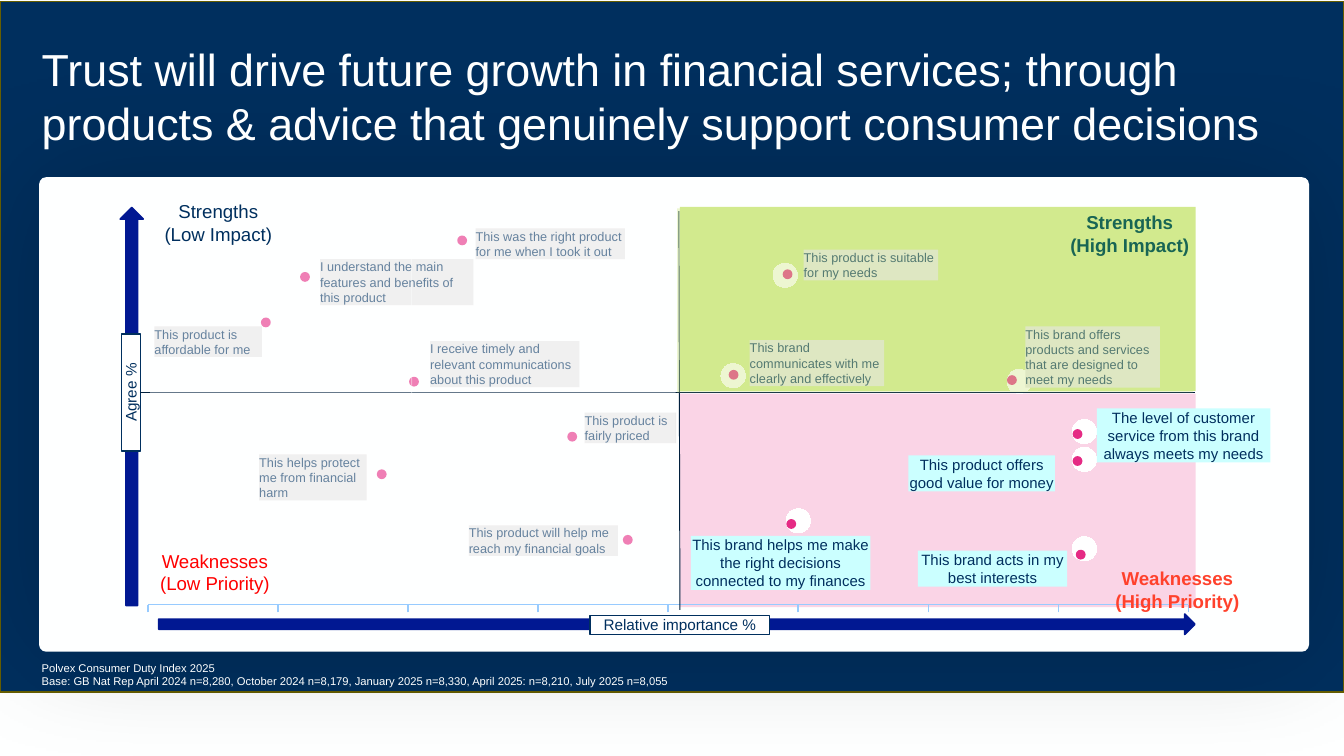
from dataclasses import dataclass

import pptx
import pptx.chart.data
import pptx.dml.color
import pptx.enum.chart
import pptx.enum.shapes
import pptx.enum.text
import pptx.oxml
import pptx.oxml.ns
import pptx.util

Cm, Pt = pptx.util.Cm, pptx.util.Pt
SHAPE = pptx.enum.shapes.MSO_SHAPE
ALIGN = pptx.enum.text.PP_ALIGN
ANCHOR = pptx.enum.text.MSO_ANCHOR
NAVY, WHITE, BLUE, PINK, LIME = "002F5E", "FEFFFF", "011892", "E52A84", "D2EA8E"
NS = pptx.oxml.ns.nsdecls("a")
DOT = 0.15


@dataclass
class Box:
    x: float
    y: float
    w: float
    h: float


@dataclass
class Statement:
    text: str
    x: float
    y: float
    w: float
    lines: int
    dot_x: float
    dot_y: float
    key: bool = False


@dataclass
class Corner:
    text: str
    box: Box
    color: str
    bold: bool = False


STATEMENTS = [
    Statement("This product is affordable for me", 2.92, 6.17, 2.03, 2, 4.95, 6.02),
    Statement("This product will help me reach my financial goals", 8.86, 9.93, 2.82, 2, 11.79, 10.13),
    Statement("This was the right product for me when I took it out", 8.99, 4.32, 2.82, 2, 8.66, 4.47),
    Statement("This product is suitable for my needs", 15.19, 4.72, 2.54, 2, 14.81, 5.11),
    Statement("This brand communicates with me clearly and effectively", 14.17, 6.43, 2.54, 3, 13.79, 7.01),
    Statement("The level of customer service from this brand always meets my needs",
              20.73, 7.72, 3.28, 3, 20.29, 8.13, True),
    Statement("This brand acts in my best interests", 17.35, 10.41, 2.82, 2, 20.35, 10.41, True),
    Statement("This brand offers products and services that are designed to meet my needs",
              19.38, 6.17, 2.54, 4, 19.05, 7.11),
    Statement("This brand helps me make the right decisions connected to my finances",
              13.06, 10.13, 3.39, 3, 14.88, 9.83, True),
    Statement("This product is fairly priced", 11.05, 7.8, 1.73, 2, 10.74, 8.18),
    Statement("I receive timely and relevant communications about this product", 8.13, 6.45, 2.82, 3, 7.75, 7.14),
    Statement("This helps protect me from financial harm", 4.9, 8.59, 2.03, 3, 7.14, 8.89),
    Statement("I understand the main features and benefits of this product", 6.05, 4.9, 2.9, 3, 5.69, 5.16),
    Statement("This product offers good value for money", 17.17, 8.61, 2.77, 2, 20.29, 8.64, True),
]
CORNERS = [
    Corner("Weaknesses\n(High Priority)", Box(21.03, 10.72, 2.44, 0.86), "FF412C", True),
    Corner("Weaknesses\n(Low Priority)", Box(2.84, 10.39, 2.44, 0.86), "FF0000"),
    Corner("Strengths\n(Low Impact)", Box(3.07, 3.78, 2.11, 0.86), NAVY),
]
HIGH_IMPACT = Corner("Strengths\n(High Impact)", Box(19.89, 3.99, 2.92, 0.86), "186554", True)
VEILS = [(Box(2.84, 4.75, 4.95, 5.51), WHITE), (Box(7.77, 3.91, 5, 7.19), WHITE),
         (Box(12.8, 3.94, 9.75, 3.48), LIME)]
POINTS = [(0.051, 75), (0.042, 93), (0.102, 66), (0.102, 45), (0.075, 76), (0.08, 50), (0.048, 59),
          (0.097, 75), (0.039, 86), (0.063, 66), (0.079, 94), (0.102, 61), (0.067, 48), (0.054, 100)]


def rgb(color: str):
    return pptx.dml.color.RGBColor.from_string(color)


def place(box: Box):
    return Cm(box.x), Cm(box.y), Cm(box.w), Cm(box.h)


def add_box(s, box: Box, fill: str, kind=SHAPE.RECTANGLE, line: str = "", width: float = 1, rotation: float = 0):
    sp = s.shapes.add_shape(kind, *place(box))
    sp.shadow.inherit = False
    sp.rotation = rotation
    sp.fill.solid()
    sp.fill.fore_color.rgb = rgb(fill)
    if line:
        sp.line.color.rgb = rgb(line)
        sp.line.width = Pt(width)
    else:
        sp.line.fill.background()
    return sp


def write(sp, text: str, *, size: float, color: str = NAVY, bold: bool = False, align=ALIGN.LEFT):
    tf = sp.text_frame
    tf.word_wrap = True
    tf.auto_size = pptx.enum.text.MSO_AUTO_SIZE.SHAPE_TO_FIT_TEXT
    tf.vertical_anchor = ANCHOR.TOP
    tf.margin_left = tf.margin_right = tf.margin_top = tf.margin_bottom = 0
    for i, line in enumerate(text.split("\n")):
        p = tf.paragraphs[0] if i == 0 else tf.add_paragraph()
        p.alignment = align
        r = p.add_run()
        r.text = line
        r.font.name, r.font.size, r.font.bold = "Arial", Pt(size), bold
        r.font.color.rgb = rgb(color)


def add_text(s, box: Box, text: str, **style):
    write(s.shapes.add_textbox(*place(box)), text, **style)


def add_corner(s, corner: Corner):
    add_text(s, corner.box, corner.text, size=10, color=corner.color, bold=corner.bold, align=ALIGN.CENTER)


def add_axis_title(s, box: Box, text: str, rotation: float = 0):
    sp = add_box(s, box, "FFFFFF", line=NAVY, width=0.75, rotation=rotation)
    write(sp, text, size=8.2, align=ALIGN.CENTER)


def add_divider(s, x1: float, y1: float, x2: float, y2: float):
    sp = s.shapes.add_connector(pptx.enum.shapes.MSO_CONNECTOR.STRAIGHT, Cm(x1), Cm(y1), Cm(x2), Cm(y2))
    sp.line.color.rgb = rgb("001F3D")
    sp.line.width = Pt(0.5)
    sp._element.spPr.append(pptx.oxml.parse_xml(f"<a:effectLst {NS}/>"))


def add_statement(s, st: Statement):
    height = st.lines * (0.34 if st.key else 0.29)
    sp = add_box(s, Box(st.x, st.y, st.w, height), "CBFFFF" if st.key else "E7E6E6")
    write(sp, st.text, size=8 if st.key else 6.8, align=ALIGN.CENTER if st.key else ALIGN.LEFT)
    add_box(s, Box(st.dot_x, st.dot_y, DOT, DOT), PINK, SHAPE.OVAL, PINK)


def add_scatter(s, box: Box):
    data = pptx.chart.data.XyChartData()
    series = data.add_series("Series 1")
    for x, y in POINTS:
        series.add_data_point(x, y)
    chart = s.shapes.add_chart(pptx.enum.chart.XL_CHART_TYPE.XY_SCATTER, *place(box), data).chart
    chart.has_legend = chart.has_title = False
    chart.font.name, chart.font.size = "Arial", Pt(10)
    chart.font.color.rgb = rgb(NAVY)
    plot = chart.plots[0]
    plot.vary_by_categories = False
    ser = plot.series[0]
    ser.smooth = False
    ser.format.line.fill.background()
    ser.marker.style = pptx.enum.chart.XL_MARKER_STYLE.CIRCLE
    ser.marker.size = 13
    ser.marker.format.fill.solid()
    ser.marker.format.fill.fore_color.rgb = rgb("FFFFFF")
    ser.marker.format.line.color.rgb = rgb("FFFFFF")
    xs, ys = chart.category_axis, chart.value_axis
    for axis, low, high in ((xs, 0.03, 0.11), (ys, 35, 106)):
        axis.minimum_scale, axis.maximum_scale = low, high
        axis.has_major_gridlines = False
    ys.visible = False
    xs.major_unit = 0.01
    xs.major_tick_mark = pptx.enum.chart.XL_TICK_MARK.OUTSIDE
    xs.tick_labels.number_format = "0%"
    xs.tick_labels.number_format_is_linked = False
    xs.tick_labels.font.size = Pt(12)
    xs.tick_labels.font.color.rgb = rgb(WHITE)
    xs.format.line.color.rgb = rgb("97CBFF")
    xs.format.line.width = Pt(0.75)
    area = chart._chartSpace.chart.plotArea
    for old in area.findall(pptx.oxml.ns.qn("c:layout")):
        area.remove(old)
    parts = (("layoutTarget", "inner"), ("xMode", "edge"), ("yMode", "edge"),
             ("x", 0.041), ("y", 0.045), ("w", 0.933), ("h", 0.886))
    inner = "".join(f'<c:{tag} val="{val}"/>' for tag, val in parts)
    area.insert(0, pptx.oxml.parse_xml(
        f'<c:layout {pptx.oxml.ns.nsdecls("c")}><c:manualLayout>{inner}</c:manualLayout></c:layout>'))


def main():
    """Build the priority matrix slide."""
    prs = pptx.Presentation()
    prs.slide_width, prs.slide_height = Cm(25.4), Cm(14.29)
    s = prs.slides.add_slide(prs.slide_layouts[6])
    s.background.fill.solid()
    s.background.fill.fore_color.rgb = rgb(WHITE)
    add_box(s, Box(0, 0.03, 25.4, 13.06), NAVY, line="665E00")
    card = add_box(s, Box(0.74, 3.35, 24, 8.97), WHITE, SHAPE.ROUNDED_RECTANGLE)
    card.adjustments[0] = 0.015
    card._element.spPr.find(pptx.oxml.ns.qn("a:effectLst")).append(pptx.oxml.parse_xml(
        f'<a:outerShdw {NS} blurRad="{Pt(64.8)}" dist="0" dir="16320000" rotWithShape="0">'
        '<a:srgbClr val="000000"><a:alpha val="19000"/></a:srgbClr></a:outerShdw>'))
    add_box(s, Box(12.85, 7.44, 9.75, 4.04), "FAD4E6")
    add_box(s, Box(12.85, 3.91, 9.75, 3.48), LIME)
    add_scatter(s, Box(1.93, 3.56, 21.08, 8.56))
    add_text(s, Box(0.79, 12.5, 14, 0.51),
             "Polvex Consumer Duty Index 2025\nBase: GB Nat Rep April 2024 n=8,280, October 2024 n=8,179, "
             "January 2025 n=8,330, April 2025: n=8,210, July 2025 n=8,055", size=6, color=WHITE)
    add_box(s, Box(-1.27, 7.47, 7.52, 0.43), BLUE, SHAPE.RIGHT_ARROW, BLUE, rotation=270)
    add_box(s, Box(3, 11.61, 19.58, 0.38), BLUE, SHAPE.RIGHT_ARROW, BLUE)
    for corner in CORNERS:
        add_corner(s, corner)
    add_text(s, Box(0.79, 0.79, 24.61, 2.06), "Trust will drive future growth in financial services; through "
             "products & advice that genuinely support consumer decisions", size=24, color=WHITE)
    add_axis_title(s, Box(11.15, 11.63, 3.4, 0.36), "Relative importance %")
    add_axis_title(s, Box(1.37, 7.24, 2.21, 0.36), "Agree %", 270)
    add_divider(s, 12.83, 3.99, 12.85, 11.53)
    add_divider(s, 22.58, 7.42, 2.64, 7.42)
    for st in STATEMENTS:
        add_statement(s, st)
    for box, color in VEILS:
        veil = add_box(s, box, color)
        tint = veil._element.spPr.find(".//" + pptx.oxml.ns.qn("a:srgbClr"))
        tint.append(pptx.oxml.parse_xml(f'<a:alpha {NS} val="40000"/>'))
    add_corner(s, HIGH_IMPACT)
    prs.save("out.pptx")


if __name__ == "__main__":
    main()
